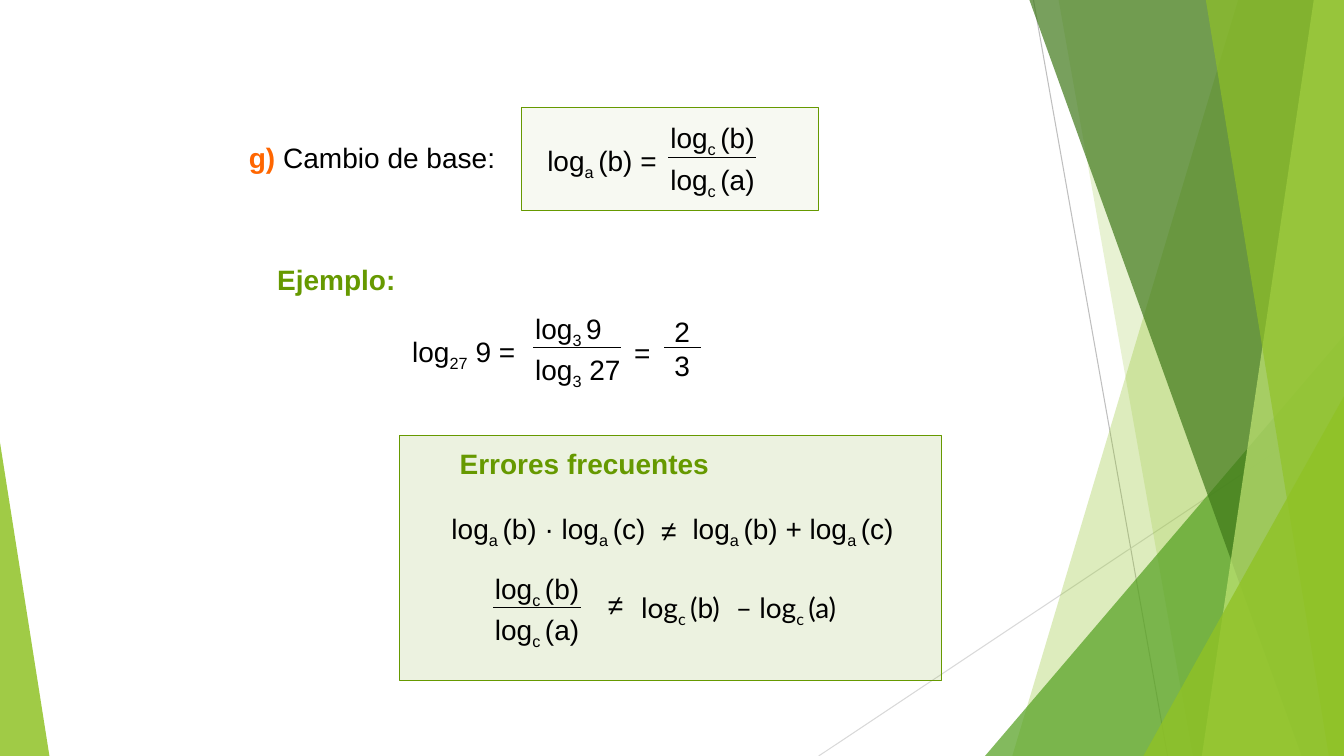
from dataclasses import dataclass

from lxml.etree import SubElement
from pptx import Presentation
from pptx.dml.color import RGBColor
from pptx.enum.shapes import MSO_CONNECTOR as CONN, MSO_SHAPE as SHAPE
from pptx.enum.text import MSO_ANCHOR as ANCHOR
from pptx.oxml.ns import qn
from pptx.util import Pt

PX = 9144  # 100 px to the inch
WIDTH, HEIGHT = 1333, 750


@dataclass(frozen=True)
class Theme:
    black: str = "000000"
    orange: str = "FF6600"
    olive: str = "669900"
    lime: str = "90C226"
    pale_lime: str = "C0E474"
    leaf: str = "54A021"
    forest: str = "3F7819"
    grey: str = "BFBFBF"
    light_grey: str = "D9D9D9"
    font: str = "Arial"
    alt_font: str = "Lato"
    size: int = 20
    thin: float = 0.75
    frame: float = 1


T = Theme()


@dataclass(frozen=True)
class Band:
    """Strip with a slanted left edge reaching the right side of the slide."""
    top: int
    bottom: int
    color: str
    alpha: int


@dataclass(frozen=True)
class Triangle:
    x: int
    y: int
    w: int
    apex: int
    color: str
    alpha: int


@dataclass(frozen=True)
class Fraction:
    """Two stacked logarithms; x and y give the left end of the bar."""
    x: int
    y: int
    over: str
    under: str


BACKDROP = [
    Band(1228, 1004, T.lime, 30),
    Band(1050, 1183, T.lime, 20),
    Triangle(977, 333, 356, 1, T.leaf, 72),
    Band(1021, 1291, T.forest, 70),
    Band(1303, 1192, T.pale_lime, 70),
    Band(1196, 1318, T.lime, 65),
    Triangle(1134, 393, 199, 1, T.lime, 80),
    Triangle(0, 439, 49, 0, T.lime, 85),
]

FRACTIONS = [
    Fraction(663, 156, "log|c |(b)", "log|c |(a)"),
    Fraction(529, 345, "log|3 |9", "log|3| 27"),
    Fraction(489, 603, "log|c |(b)", "log|c |(a)"),
]


def px(*values: int) -> list[int]:
    return [v * PX for v in values]


def paint(sp, color: str, alpha: int) -> None:
    """Fill with a colour at alpha percent opacity, with no line or shadow."""
    sp.shadow.inherit = False
    sp.line.fill.background()
    sp.fill.solid()
    sp.fill.fore_color.rgb = RGBColor.from_string(color)
    clr = sp._element.spPr.find(qn("a:solidFill")).find(qn("a:srgbClr"))
    SubElement(clr, qn("a:alpha")).set("val", str(alpha * 1000))


def add_band(s, band: Band) -> None:
    corners = [(WIDTH, 0), (WIDTH, HEIGHT), (band.bottom, HEIGHT)]
    fb = s.shapes.build_freeform(band.top, 0, scale=PX)
    fb.add_line_segments(corners, close=True)
    paint(fb.convert_to_shape(), band.color, band.alpha)


def add_triangle(s, tri: Triangle) -> None:
    sp = s.shapes.add_shape(SHAPE.ISOSCELES_TRIANGLE,
                            *px(tri.x, tri.y, tri.w, HEIGHT - tri.y))
    sp.adjustments[0] = tri.apex
    paint(sp, tri.color, tri.alpha)


def add_frame(s, x: int, y: int, w: int, h: int, alpha: int, line: float) -> None:
    sp = s.shapes.add_shape(SHAPE.RECTANGLE, *px(x, y, w, h))
    paint(sp, T.olive, alpha)
    sp.line.color.rgb = RGBColor.from_string(T.olive)
    sp.line.width = Pt(line)


def add_line(s, x1: int, y1: int, x2: int, y2: int, color: str = T.black) -> None:
    cn = s.shapes.add_connector(CONN.STRAIGHT, *px(x1, y1, x2, y2))
    cn.line.color.rgb = RGBColor.from_string(color)
    cn.line.width = Pt(T.thin)
    SubElement(cn._element.spPr, qn("a:effectLst"))


def add_run(p, text: str, font: str, color: str, bold: bool, sub: bool = False) -> None:
    r = p.add_run()
    r.text = text
    r.font.name = font
    r.font.size = Pt(T.size)
    r.font.bold = bold
    r.font.color.rgb = RGBColor.from_string(color)
    if sub:
        r._r.get_or_add_rPr().set("baseline", "-25000")


def add_text(s, text: str, x: int, y: int, w: int, h: int = 44, *, lead: str = "",
             font: str = T.font, color: str = T.black, bold: bool = False,
             spacing: float = 1.0, anchor: ANCHOR = ANCHOR.TOP) -> None:
    """Write text whose parts between bars are subscripts, after an orange lead."""
    tf = s.shapes.add_textbox(*px(x, y, w, h)).text_frame
    tf.word_wrap = True
    tf.vertical_anchor = anchor
    for i, row in enumerate(text.split("\n")):
        p = tf.add_paragraph() if i else tf.paragraphs[0]
        p.line_spacing = spacing
        if lead and i == 0:
            add_run(p, lead, font, T.orange, True)
        for j, part in enumerate(row.split("|")):
            add_run(p, part, font, color, bold, sub=j % 2 == 1)


def add_fraction(s, f: Fraction) -> None:
    add_text(s, f.over, f.x - 8, f.y - 41, 120)
    add_text(s, f.under, f.x - 8, f.y, 120)
    add_line(s, f.x, f.y, f.x + 87, f.y)


def add_backdrop(s) -> None:
    add_line(s, 1025, 0, 1158, HEIGHT, T.grey)
    add_line(s, WIDTH, 403, 812, HEIGHT, T.light_grey)
    for part in BACKDROP:
        if isinstance(part, Band):
            add_band(s, part)
        else:
            add_triangle(s, part)


def add_formulas(s) -> None:
    heading = dict(color=T.olive, bold=True)
    formula = dict(spacing=1.2, anchor=ANCHOR.MIDDLE)

    add_text(s, "Cambio de base:", 237, 128, 280, 51, lead="g) ", spacing=1.2)
    add_frame(s, 517, 107, 295, 102, 5, T.thin)
    add_text(s, "log|a |(b) =", 533, 128, 140, 59, **formula)

    add_text(s, "Ejemplo:", 265, 256, 180, **heading)
    add_text(s, "log|27| 9 =", 399, 317, 140, 59, **formula)
    add_text(s, "=", 619, 317, 40, 59, **formula)
    add_text(s, "2\n3", 659, 307, 36, 77)
    add_line(s, 659, 345, 695, 345)

    add_frame(s, 396, 432, 538, 243, 12, T.frame)
    add_text(s, "Errores frecuentes", 446, 438, 285, **heading)
    add_text(s, "log|a |(b) · log|a |(c)", 438, 498, 220, 50, **formula)
    add_text(s, "≠", 646, 498, 40, 50, **formula)
    add_text(s, "log|a |(b) + log|a |(c)", 677, 498, 225, 50, **formula)
    add_text(s, "≠", 593, 578, 36)
    add_text(s, "log|c |(b)", 626, 573, 110, 50, font=T.alt_font, spacing=1.2)
    add_text(s, "– log|c |(a)", 720, 573, 140, 50, font=T.alt_font, spacing=1.2)

    for f in FRACTIONS:
        add_fraction(s, f)


def main() -> None:
    prs = Presentation()
    prs.slide_width, prs.slide_height = px(WIDTH, HEIGHT)
    s = prs.slides.add_slide(prs.slide_layouts[6])
    add_backdrop(s)
    add_formulas(s)
    prs.save("out.pptx")


if __name__ == "__main__":
    main()
